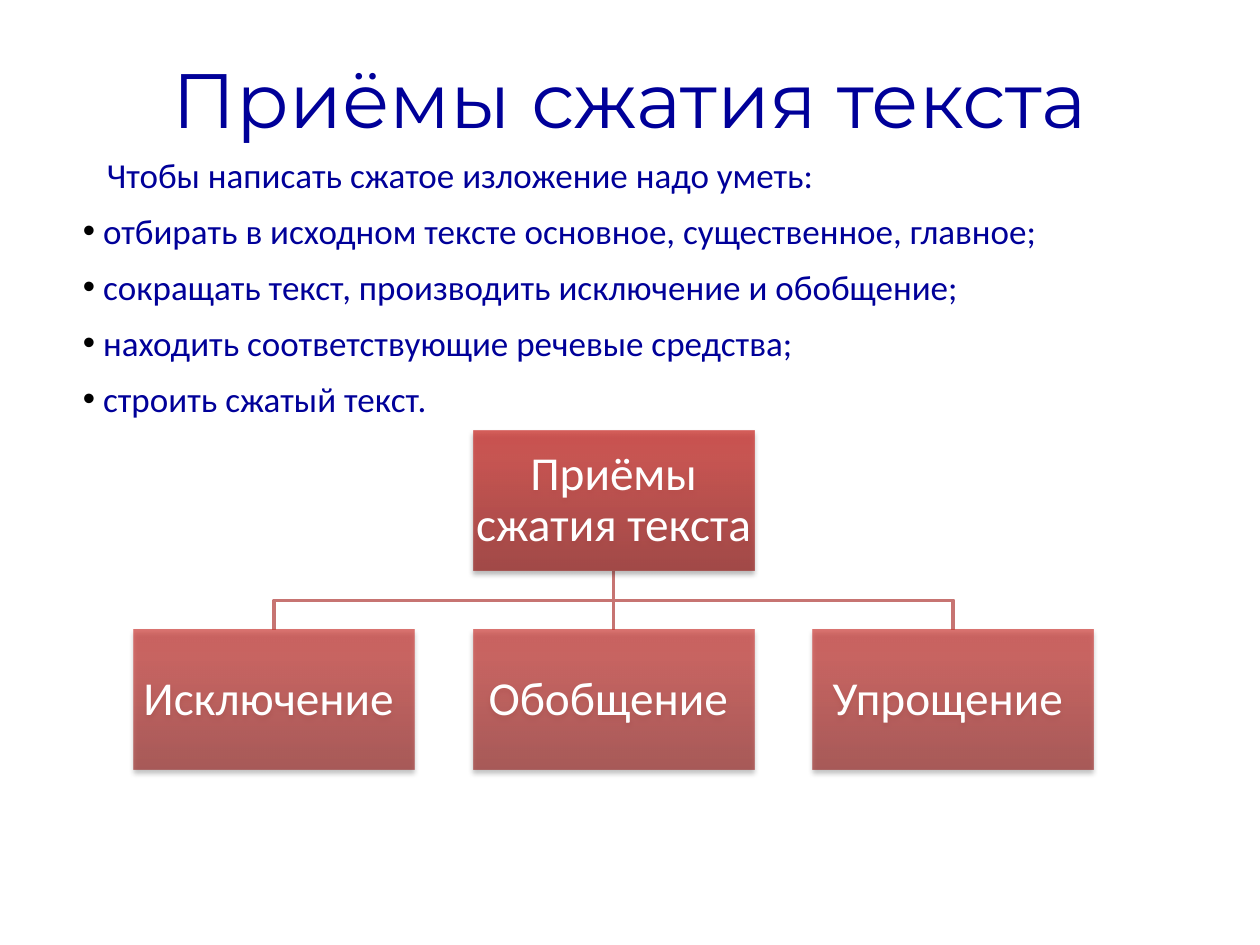
from lxml.etree import SubElement
from pptx import Presentation
from pptx.dml.color import RGBColor
from pptx.enum.shapes import MSO_CONNECTOR, MSO_SHAPE
from pptx.enum.text import MSO_ANCHOR, PP_ALIGN
from pptx.oxml.ns import qn
from pptx.util import Inches, Pt

COLS, ROWS = 100, 75
NAVY, WHITE, BLACK, ROSE = "000099", "FFFFFF", "000000", "C77472"
STOPS = ((0, "9C2F2D"), (80, "CB3E3A"), (100, "CE3B37"))


def color(code):
    return RGBColor.from_string(code)


def node(parent, tag, **attrs):
    return SubElement(parent, qn(tag), {k: str(v) for k, v in attrs.items()})


def tint(parent, code, alpha):
    node(node(parent, "a:srgbClr", val=code), "a:alpha", val=alpha * 1000)


class Deck:
    font, size, line = "Calibri", 20, 2

    def __init__(self):
        self.prs = Presentation()
        self.prs.slide_width, self.prs.slide_height = Inches(10), Inches(7.5)
        self.slide = self.prs.slides.add_slide(self.prs.slide_layouts[5])
        self.shapes = self.slide.shapes

    def x(self, col):
        return round(self.prs.slide_width * col / COLS)

    def y(self, row):
        return round(self.prs.slide_height * row / ROWS)

    def area(self, col, row, wide, high):
        return self.x(col), self.y(row), self.x(wide), self.y(high)

    def label(self, para, text, size, hue, font=None):
        run = para.add_run()
        run.text = text
        run.font.size, run.font.name = Pt(size), font or self.font
        run.font.color.rgb = color(hue)

    def title(self, text, *area):
        head = self.shapes.title
        head.left, head.top, head.width, head.height = self.area(*area)
        head.text_frame.vertical_anchor = MSO_ANCHOR.MIDDLE
        para = head.text_frame.paragraphs[0]
        para.alignment = PP_ALIGN.CENTER
        self.label(para, text, 44, NAVY, "Montserrat")

    def body(self, lead, items, *area):
        frame = self.shapes.add_textbox(*self.area(*area)).text_frame
        frame.word_wrap = True
        for i, text in enumerate([lead, *items]):
            para = frame.add_paragraph() if i else frame.paragraphs[0]
            para.alignment, para.space_before = PP_ALIGN.JUSTIFY, Pt(8)
            props = para._p.get_or_add_pPr()
            margin, indent = (1.7, -1.6) if i else (0, 2)
            props.set("marL", str(self.x(margin)))
            props.set("indent", str(self.x(indent)))
            if i:
                node(node(props, "a:buClr"), "a:srgbClr", val=BLACK)
                node(props, "a:buFont", typeface="Arial")
                node(props, "a:buChar", char="•")
            self.label(para, text, self.size, NAVY)

    def box(self, text, alpha, *area):
        shape = self.shapes.add_shape(MSO_SHAPE.RECTANGLE, *self.area(*area))
        shape.line.fill.background()
        props = shape._element.spPr
        grad = node(props, "a:gradFill", rotWithShape=1)
        props.find(qn("a:prstGeom")).addnext(grad)
        stops = node(grad, "a:gsLst")
        for pos, code in STOPS:
            tint(node(stops, "a:gs", pos=pos * 1000), code, alpha)
        node(grad, "a:lin", ang=270 * 60000, scaled=0)
        shade = node(node(props, "a:effectLst"), "a:outerShdw", blurRad=Pt(3.1),
                     dist=Pt(1.8), dir=90 * 60000, rotWithShape=0)
        tint(shade, BLACK, 35)
        frame = shape.text_frame
        frame.word_wrap, frame.vertical_anchor = True, MSO_ANCHOR.MIDDLE
        frame.margin_left = frame.margin_right = self.x(0.2)
        frame.margin_top = frame.margin_bottom = self.y(0.2)
        para = frame.paragraphs[0]
        para.alignment, para.line_spacing = PP_ALIGN.CENTER, 0.9
        self.label(para, text, 27, WHITE)

    def stroke(self, shape):
        shape.line.color.rgb, shape.line.width = color(ROSE), Pt(self.line)
        node(shape._element.spPr, "a:effectLst")

    def link(self, start, end, top, low):
        if self.x(start) == self.x(end):
            self.stroke(self.shapes.add_connector(
                MSO_CONNECTOR.STRAIGHT, self.x(start), self.y(top), self.x(end), self.y(low)))
            return
        mid = self.y((top + low) / 2)
        pen = self.shapes.build_freeform(self.x(start), self.y(top))
        pen.add_line_segments([(self.x(start), mid), (self.x(end), mid),
                               (self.x(end), self.y(low))], close=False)
        shape = pen.convert_to_shape()
        shape.fill.background()
        self.stroke(shape)

    def tree(self, root, leaves, left, top, low, step, wide, high):
        cols = [left + i * step for i in range(len(leaves))]
        mid = sum(cols) / len(cols)
        for col in cols:
            self.link(mid + wide / 2, col + wide / 2, top + high, low)
        self.box(root, 80, mid, top, wide, high)
        for text, col in zip(leaves, cols):
            self.box(text, 70, col, low, wide, high)


def main():
    deck = Deck()
    deck.title("Приёмы сжатия текста", 5, 1.4, 90, 12.7)
    deck.body("Чтобы написать сжатое изложение надо уметь:", [
        "отбирать в исходном тексте основное, существенное, главное;",
        "сокращать текст, производить исключение и обобщение;",
        "находить соответствующие речевые средства;",
        "строить сжатый текст.",
    ], 5.5, 11.7, 89.8, 27.3)
    deck.tree("Приёмы сжатия текста", ["Исключение ", "Обобщение ", "Упрощение "],
              left=10.6, top=34.2, low=50, step=26.95, wide=22.3, high=11.1)
    deck.prs.save("out.pptx")


if __name__ == "__main__":
    main()
